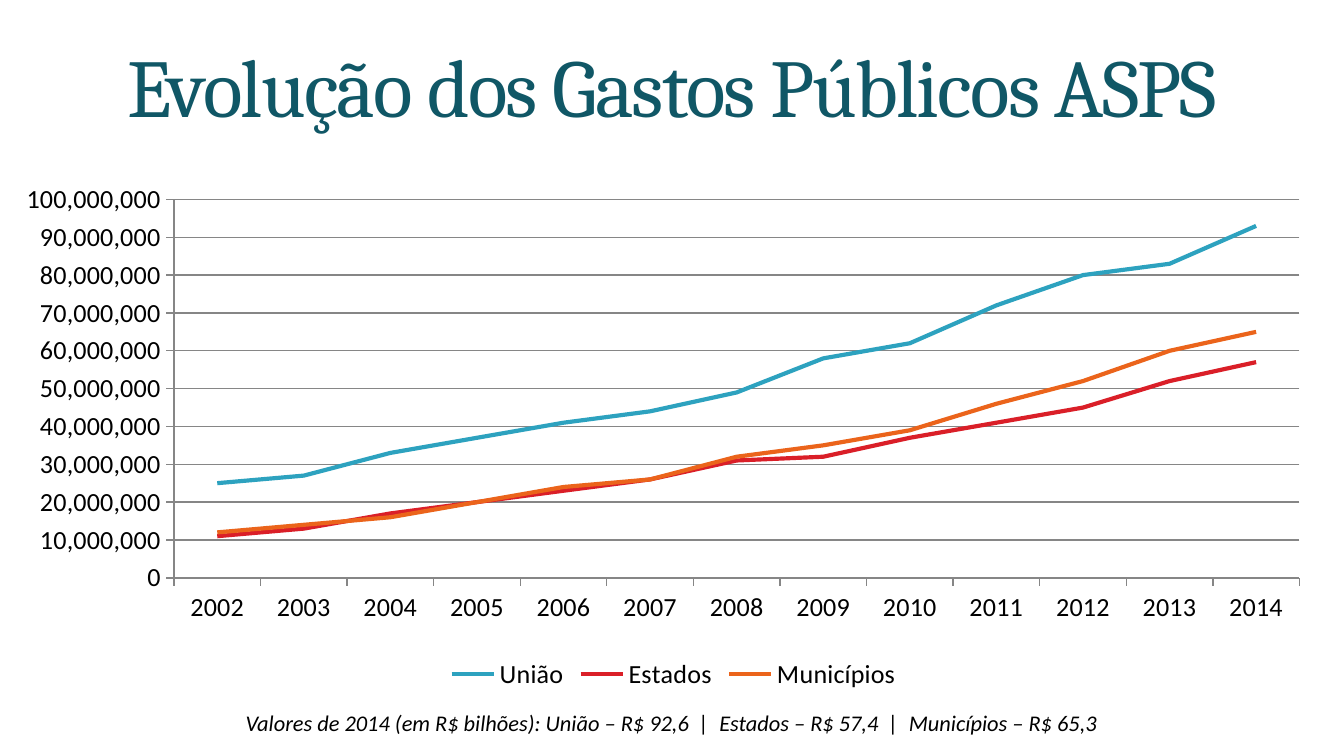
from lxml import etree
from pptx import Presentation
from pptx.chart.data import CategoryChartData
from pptx.dml.color import RGBColor
from pptx.enum.chart import XL_CHART_TYPE, XL_LEGEND_POSITION, XL_MARKER_STYLE, XL_TICK_MARK
from pptx.enum.text import MSO_ANCHOR, PP_ALIGN
from pptx.oxml.ns import qn
from pptx.util import Cm, Pt

LINE_CHART = XL_CHART_TYPE.LINE
LEGEND_BOTTOM = XL_LEGEND_POSITION.BOTTOM
NO_MARKER = XL_MARKER_STYLE.NONE
TICK_OUTSIDE = XL_TICK_MARK.OUTSIDE
MIDDLE, TOP = MSO_ANCHOR.MIDDLE, MSO_ANCHOR.TOP
CENTER = PP_ALIGN.CENTER

TEAL = RGBColor(0x10, 0x57, 0x66)
BLACK = RGBColor(0x00, 0x00, 0x00)
GRAY = RGBColor(0x86, 0x86, 0x86)
BLUE = RGBColor(0x2D, 0xA2, 0xBF)
RED = RGBColor(0xDA, 0x1F, 0x28)
ORANGE = RGBColor(0xEB, 0x64, 0x1B)

YEARS = range(2002, 2015)
MILLION = 1_000_000
# Spending in millions, one value per year
SPENDING = {
    "União": (BLUE, [25, 27, 33, 37, 41, 44, 49, 58, 62, 72, 80, 83, 93]),
    "Estados": (RED, [11, 13, 17, 20, 23, 26, 31, 32, 37, 41, 45, 52, 57]),
    "Municípios": (ORANGE, [12, 14, 16, 20, 24, 26, 32, 35, 39, 46, 52, 60, 65]),
}
PLOT_AREA = {"x": 0.112, "y": 0.043, "w": 0.874, "h": 0.73}

TITLE_FONT = {"name": "Cambria", "size": Pt(44)}
NOTE_FONT = {"name": "Calibri", "size": Pt(12), "italic": True}
CHART_FONT = {"name": "Calibri", "size": Pt(14)}


def set_font(font, values, color):
    for attribute, value in values.items():
        setattr(font, attribute, value)
    font.color.rgb = color


def add_line_of_text(slide, box, text, font, color, anchor, line_spacing, inset):
    """Place one centred paragraph in the box and return its run."""
    frame = slide.shapes.add_textbox(*box).text_frame
    frame.word_wrap = True
    frame.vertical_anchor = anchor
    frame.margin_left = frame.margin_right = inset
    frame.margin_top = frame.margin_bottom = Cm(0.12)
    paragraph = frame.paragraphs[0]
    paragraph.alignment = CENTER
    paragraph.line_spacing = line_spacing
    run = paragraph.add_run()
    run.text = text
    set_font(run.font, font, color)
    return run


def add_title(slide, box):
    run = add_line_of_text(slide, box, "Evolução dos Gastos Públicos ASPS",
                           TITLE_FONT, TEAL, MIDDLE, 0.8, Cm(0.1))
    run.font._element.set("spc", "-100")


def add_note(slide, box):
    add_line_of_text(
        slide, box,
        "Valores de 2014 (em R$ bilhões): União – R$ 92,6  |  Estados – R$ 57,4  |  Municípios – R$ 65,3",
        NOTE_FONT, BLACK, TOP, 0.9, Cm(0.25))


def fix_plot_area(chart):
    """Set the inner plot area as fractions of the chart."""
    plot_area = chart._chartSpace.chart.plotArea
    for old_layout in plot_area.findall(qn("c:layout")):
        plot_area.remove(old_layout)
    layout = etree.Element(qn("c:layout"))
    plot_area.insert(0, layout)
    manual = etree.SubElement(layout, qn("c:manualLayout"))
    settings = {"layoutTarget": "inner", "xMode": "edge", "yMode": "edge", **PLOT_AREA}
    for tag, value in settings.items():
        etree.SubElement(manual, qn(f"c:{tag}")).set("val", str(value))


def add_spending_chart(slide, box):
    data = CategoryChartData(number_format="#,##0")
    data.categories = [str(year) for year in YEARS]
    for level, (_, millions) in SPENDING.items():
        data.add_series(level, [value * MILLION for value in millions])
    chart = slide.shapes.add_chart(LINE_CHART, *box, data).chart
    set_font(chart.font, CHART_FONT, BLACK)
    chart.has_title = False
    chart.has_legend = True
    chart.legend.position = LEGEND_BOTTOM
    chart.legend.include_in_layout = False
    fix_plot_area(chart)

    plot = chart.plots[0]
    plot.vary_by_categories = False
    for series, (color, _) in zip(plot.series, SPENDING.values()):
        series.smooth = False
        series.marker.style = NO_MARKER
        series.format.line.color.rgb = color
        series.format.line.width = Pt(2.25)

    years, amounts = chart.category_axis, chart.value_axis
    amounts.minimum_scale, amounts.maximum_scale = 0, 100 * MILLION
    amounts.major_unit = 10 * MILLION
    amounts.has_major_gridlines = True
    amounts.tick_labels.number_format = "#,##0"
    amounts.tick_labels.number_format_is_linked = False
    for axis in (years, amounts):
        axis.major_tick_mark = TICK_OUTSIDE
    for part in (years, amounts, amounts.major_gridlines):
        part.format.line.color.rgb = GRAY
        part.format.line.width = Pt(0.75)


def main():
    deck = Presentation()
    deck.slide_width, deck.slide_height = Cm(25.4), Cm(14.29)
    slide = deck.slides.add_slide(deck.slide_layouts[6])
    margin = Cm(0.5)
    content_width = deck.slide_width - 2 * margin
    add_title(slide, (margin, Cm(0.58), content_width, Cm(2.39)))
    add_spending_chart(slide, (margin, Cm(3.35), content_width, Cm(9.8)))
    add_note(slide, (0, Cm(13.34), deck.slide_width, Cm(0.71)))
    deck.save("out.pptx")


if __name__ == "__main__":
    main()
